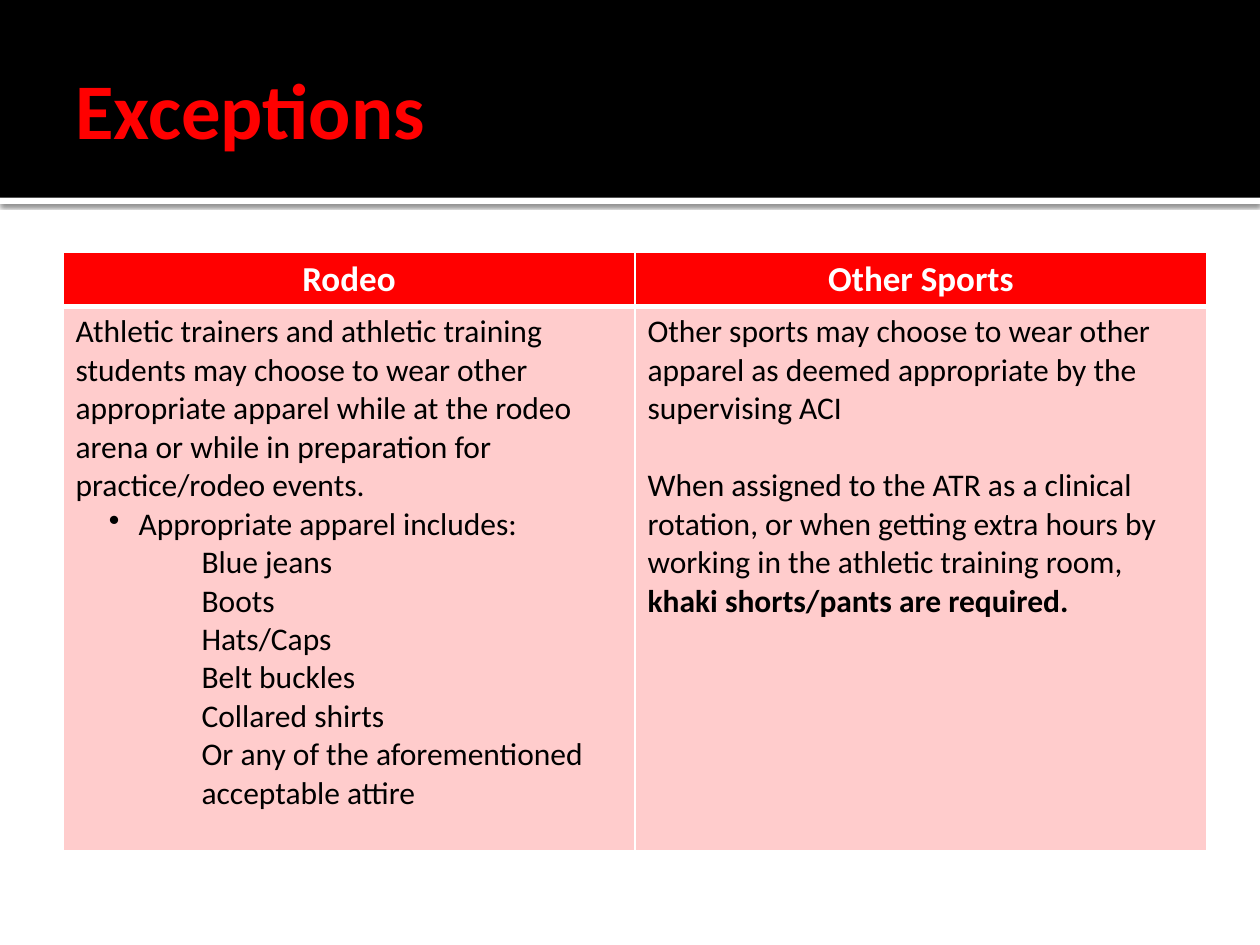
"""Builds the Exceptions slide: a title band above a two-column table."""
from lxml import etree
from pptx import Presentation
from pptx.dml.color import RGBColor
from pptx.enum import shapes, text
from pptx.oxml.ns import qn
from pptx.util import Pt

RED, PINK, WHITE, BLACK = "FF0000", "FFCCCC", "FFFFFF", "000000"
APPAREL = ["Blue jeans", "Boots", "Hats/Caps", "Belt buckles", "Collared shirts",
           "Or any of the aforementioned acceptable attire"]
RODEO = [
    ("Athletic trainers and athletic training students may choose to wear other "
     "appropriate apparel while at the rodeo arena or while in preparation for "
     "practice/rodeo events.", 0),
    ("Appropriate apparel includes:", 1),
] + [(item, 2) for item in APPAREL]
OTHER = [
    ("Other sports may choose to wear other apparel as deemed appropriate by the "
     "supervising ACI", 0),
    ("When assigned to the ATR as a clinical rotation, or when getting extra hours by "
     "working in the athletic training room, ", 0),
]
REQUIRED = "khaki shorts/pants are required."


def rgb(color):
    return RGBColor.from_string(color)


def set_font(p, size, color, bold=None):
    f = p.font
    f.name, f.size, f.bold = "Calibri", Pt(size), bold
    f.color.rgb = rgb(color)


def add_xml(parent, tag, **attrs):
    return etree.SubElement(parent, qn(tag), {k: str(v) for k, v in attrs.items()})


def add_band(s, top, height, color):
    sp = s.shapes.add_shape(shapes.MSO_SHAPE.RECTANGLE, 0, Pt(top), Pt(720), Pt(height))
    sp.shadow.inherit = False
    sp.fill.solid()
    sp.fill.fore_color.rgb = rgb(color)
    sp.line.fill.background()
    return sp


def add_shadow(sp):
    effects = sp._element.spPr.find(qn("a:effectLst"))
    shadow = add_xml(effects, "a:outerShdw", blurRad=Pt(2.5), dist=Pt(0.8),
                     dir=90 * 60000, algn="tl", rotWithShape=0)
    add_xml(add_xml(shadow, "a:srgbClr", val=BLACK), "a:alpha", val=60000)


def add_title(s, title):
    tf = s.shapes.add_textbox(Pt(36), Pt(12.24), Pt(648), Pt(98.64)).text_frame
    tf.word_wrap = True
    tf.vertical_anchor = text.MSO_ANCHOR.MIDDLE
    tf.margin_left = Pt(7.2)
    tf.margin_right = tf.margin_top = tf.margin_bottom = Pt(3.6)
    p = tf.paragraphs[0]
    p.text = title
    set_font(p, 45, RED, True)


def style_cell(cell, color, top=1, bottom=1):
    tcPr = cell._tc.get_or_add_tcPr()
    for side, width in (("L", 1), ("R", 1), ("T", top), ("B", bottom)):
        line = add_xml(tcPr, f"a:ln{side}", w=Pt(width))
        add_xml(add_xml(line, "a:solidFill"), "a:srgbClr", val=WHITE)
    cell.fill.solid()
    cell.fill.fore_color.rgb = rgb(color)


def fill_header(cell, label):
    style_cell(cell, RED, bottom=3)
    p = cell.text_frame.paragraphs[0]
    p.text = label
    p.alignment = text.PP_ALIGN.CENTER
    set_font(p, 20, WHITE, True)


def fill_body(cell, items, gap=0):
    style_cell(cell, PINK, top=3)
    tf = cell.text_frame
    for i, (words, level) in enumerate(items):
        p = tf.add_paragraph() if i else tf.paragraphs[0]
        p.text, p.level = words, level
        if i:
            p.space_before = Pt(gap)
        set_font(p, 18, BLACK, False)
        pPr = p._p.get_or_add_pPr()
        pPr.set("marL", str(Pt(36 * level)))
        pPr.set("indent", str(Pt(-17 if level == 1 else 0)))
        if level == 1:
            bullet = add_xml(pPr, "a:buChar", char="•")
            pPr.find(qn("a:defRPr")).addprevious(bullet)
    return p


def add_exceptions_table(s):
    table = s.shapes.add_table(2, 2, Pt(36), Pt(144), Pt(653.76), Pt(342)).table
    table.rows[0].height, table.rows[1].height = Pt(31.2), Pt(311)
    for col, label in enumerate(["Rodeo", "Other Sports"]):
        fill_header(table.cell(0, col), label)
    fill_body(table.cell(1, 0), RODEO)
    r = fill_body(table.cell(1, 1), OTHER, gap=22).add_run()
    r.text = REQUIRED
    r.font.bold = True


def apply_run_fonts(tf):
    for p in tf.paragraphs:
        for r in p.runs:
            f = r.font
            f.name, f.size = p.font.name, p.font.size
            f.color.rgb = p.font.color.rgb
            f.bold = p.font.bold if f.bold is None else f.bold


def main():
    prs = Presentation()
    prs.slide_width, prs.slide_height = Pt(720), Pt(540)
    s = prs.slides.add_slide(prs.slide_layouts[6])
    add_shadow(add_band(s, 113, 3.6, WHITE))
    add_band(s, 0, 113, BLACK)
    add_title(s, "Exceptions")
    add_exceptions_table(s)
    for sp in s.shapes:
        if sp.has_table:
            for cell in sp.table.iter_cells():
                apply_run_fonts(cell.text_frame)
        elif sp.has_text_frame:
            apply_run_fonts(sp.text_frame)
    prs.save("out.pptx")


if __name__ == "__main__":
    main()
